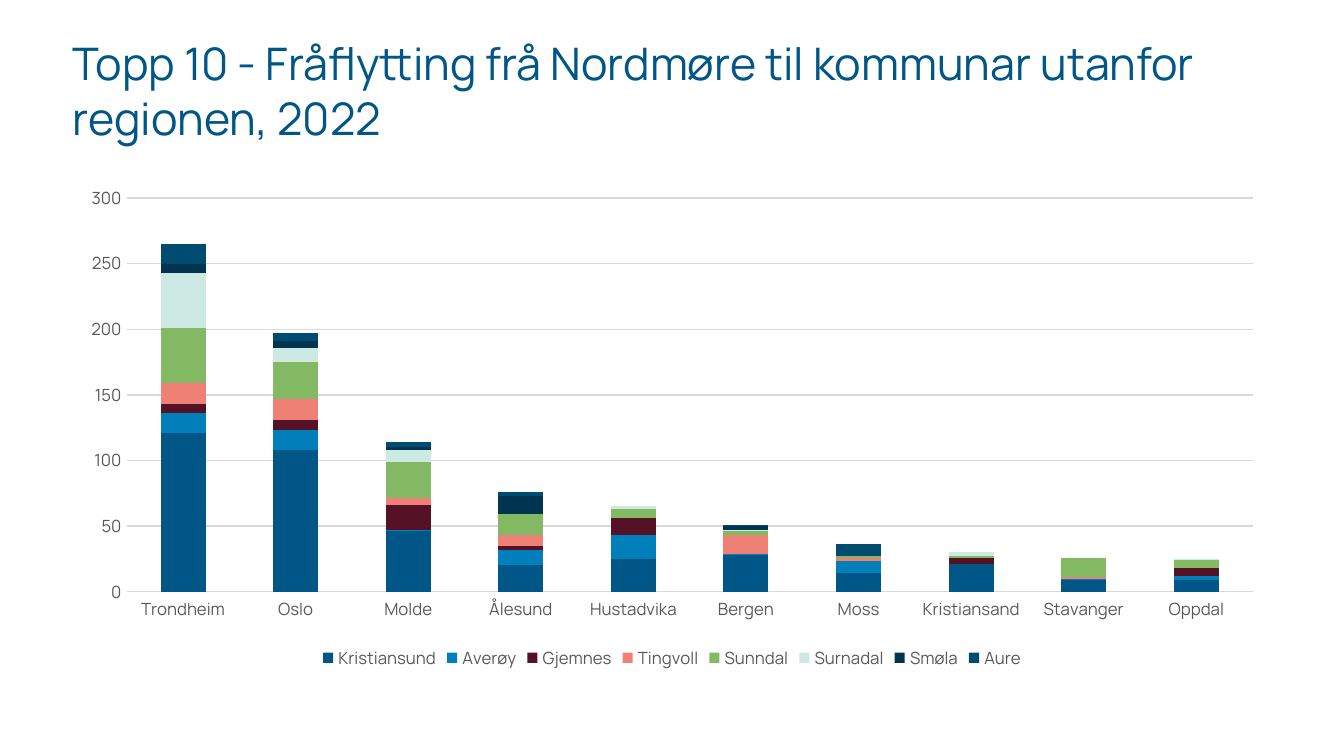
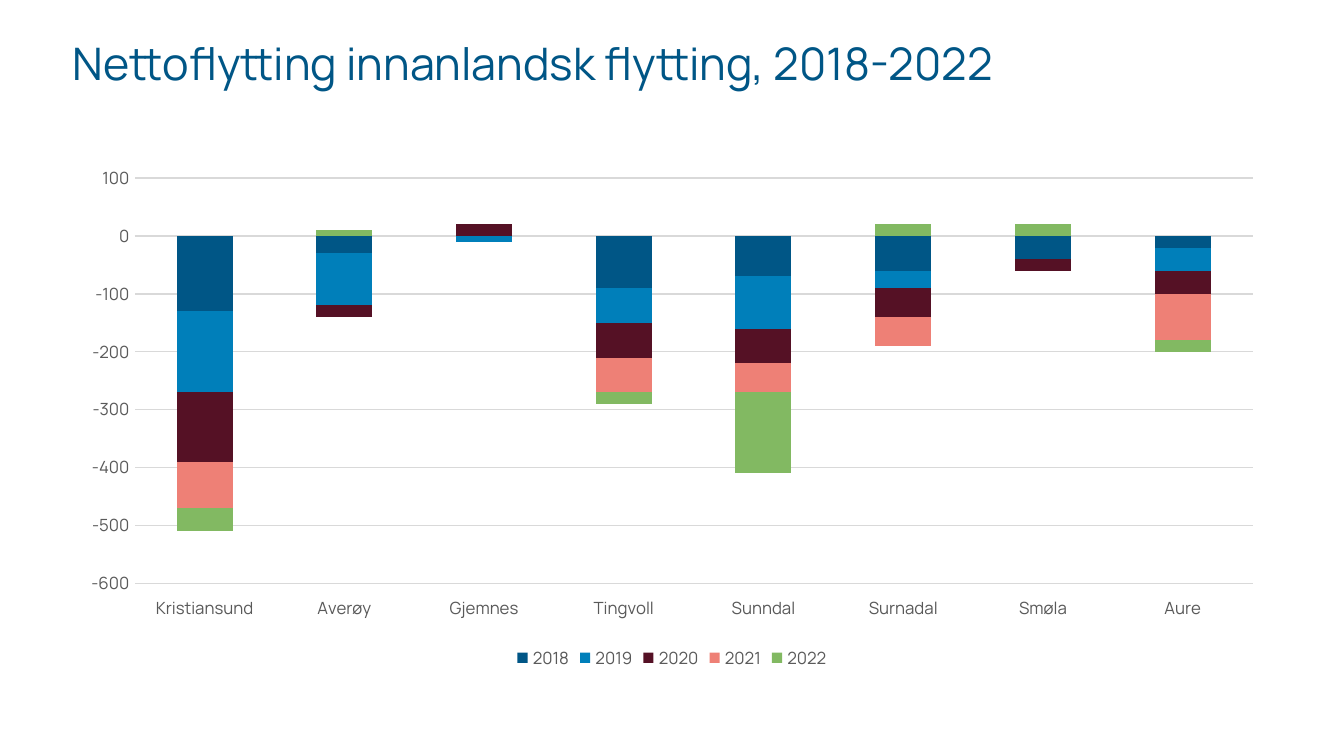
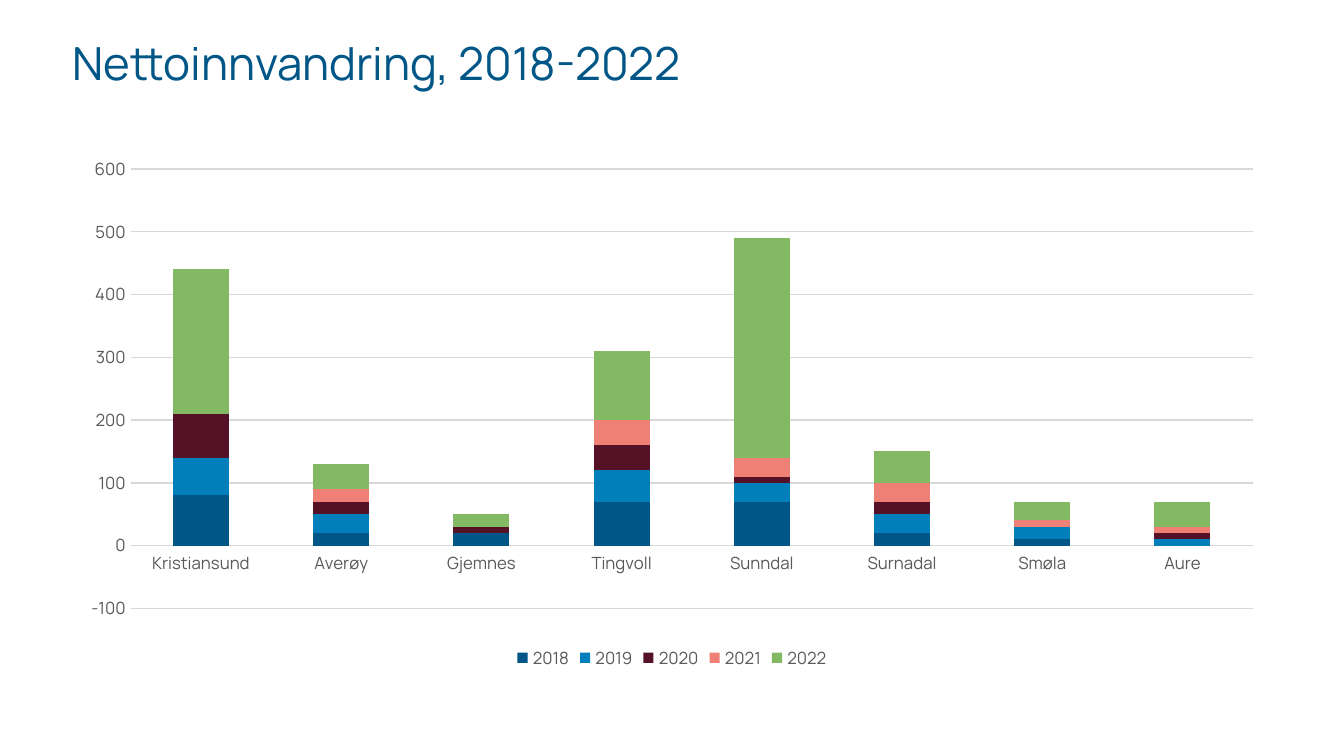
import pptx
import pptx.chart.data
import pptx.dml.color
import pptx.enum.chart
import pptx.enum.text
import pptx.util

FONT = "Manrope"
TITLE_COLOR = "005686"
LABEL_COLOR = "595959"
GRID_COLOR = "D9D9D9"
SERIES_COLORS = ["005686", "007FBA", "551125", "EE8076", "82B962", "CDE9E3", "003450", "004C70"]

SLIDE_WIDTH = pptx.util.Inches(10)
SLIDE_HEIGHT = SLIDE_WIDTH * 9 // 16
MARGIN = 5
CONTENT_WIDTH = 90
TITLE_TOP = 4.1
TITLE_HEIGHT = 16.7
CHART_BOTTOM = 89.3

MUNICIPALITIES = ["Kristiansund", "Averøy", "Gjemnes", "Tingvoll", "Sunndal", "Surnadal", "Smøla", "Aure"]
DESTINATIONS = ["Trondheim", "Oslo", "Molde", "Ålesund", "Hustadvika",
                "Bergen", "Moss", "Kristiansand", "Stavanger", "Oppdal"]
YEARS = ["2018", "2019", "2020", "2021", "2022"]

MOVES_OUT = [
    [121, 108, 46, 20, 25, 28, 14, 21, 9, 9],
    [15, 15, 1, 12, 18, 1, 9, 0, 1, 3],
    [7, 8, 19, 3, 13, 0, 0, 5, 0, 6],
    [16, 16, 5, 8, 0, 14, 3, 0, 1, 0],
    [42, 28, 28, 16, 7, 3, 1, 1, 15, 6],
    [42, 11, 9, 0, 2, 1, 0, 3, 0, 1],
    [7, 5, 2, 14, 0, 3, 0, 0, 0, 0],
    [15, 6, 4, 3, 0, 1, 9, 0, 0, 0],
]
NET_DOMESTIC = [
    [-130, -30, 0, -90, -70, -60, -40, -20],
    [-140, -90, -10, -60, -90, -30, 0, -40],
    [-120, -20, 20, -60, -60, -50, -20, -40],
    [-80, 0, 0, -60, -50, -50, 0, -80],
    [-40, 10, 0, -20, -140, 20, 20, -20],
]
NET_IMMIGRATION = [
    [80, 20, 20, 70, 70, 20, 10, 0],
    [60, 30, 0, 50, 30, 30, 20, 10],
    [70, 20, 10, 40, 10, 20, 0, 10],
    [0, 20, 0, 40, 30, 30, 10, 10],
    [230, 40, 20, 110, 350, 50, 30, 40],
]


def rgb(value):
    """Turn a hex string into a colour."""
    return pptx.dml.color.RGBColor.from_string(value)


def place(left, top, width, height):
    """Turn percentages of the slide into lengths."""
    return [int(share * size / 100) for share, size in
            zip((left, top, width, height), (SLIDE_WIDTH, SLIDE_HEIGHT) * 2)]


def set_font(font, size, color):
    """Apply the shared typeface with a size and colour."""
    font.name = FONT
    font.size = pptx.util.Pt(size)
    font.bold = False
    font.color.rgb = rgb(color)


def set_line(line, color):
    """Draw a thin solid line."""
    line.color.rgb = rgb(color)
    line.width = pptx.util.Pt(0.75)


def add_title(slide, text, size):
    """Add the slide's title."""
    shape = slide.shapes.add_textbox(*place(MARGIN, TITLE_TOP, CONTENT_WIDTH, TITLE_HEIGHT))
    frame = shape.text_frame
    frame.word_wrap = True
    frame.vertical_anchor = pptx.enum.text.MSO_ANCHOR.TOP
    frame.margin_left = frame.margin_right = pptx.util.Inches(0.04)
    frame.margin_top = frame.margin_bottom = pptx.util.Inches(0.02)
    paragraph = frame.paragraphs[0]
    paragraph.text = text
    paragraph.line_spacing = 1.03
    set_font(paragraph.font, size, TITLE_COLOR)


def style_axes(chart, scale, labels_low):
    """Format both axes and the gridlines."""
    value_axis, category_axis = chart.value_axis, chart.category_axis
    for axis in (value_axis, category_axis):
        axis.major_tick_mark = axis.minor_tick_mark = pptx.enum.chart.XL_TICK_MARK.NONE
        set_font(axis.tick_labels.font, 9, LABEL_COLOR)
    set_line(category_axis.format.line, GRID_COLOR)
    if labels_low:
        category_axis.tick_label_position = pptx.enum.chart.XL_TICK_LABEL_POSITION.LOW
    value_axis.minimum_scale, value_axis.maximum_scale, value_axis.major_unit = scale
    value_axis.format.line.fill.background()
    set_line(value_axis.major_gridlines.format.line, GRID_COLOR)
    value_axis.tick_labels.number_format = "0"
    value_axis.tick_labels.number_format_is_linked = False


def add_stacked_chart(slide, top, categories, names, rows, scale, labels_low=False):
    """Add a stacked column chart with its legend below."""
    data = pptx.chart.data.CategoryChartData(number_format="0")
    data.categories = categories
    for name, values in zip(names, rows):
        data.add_series(name, values)
    chart = slide.shapes.add_chart(
        pptx.enum.chart.XL_CHART_TYPE.COLUMN_STACKED,
        *place(MARGIN, top, CONTENT_WIDTH, CHART_BOTTOM - top), data).chart
    chart.has_title = False
    set_font(chart.font, 10, "000000")
    style_axes(chart, scale, labels_low)
    chart.has_legend = True
    chart.legend.position = pptx.enum.chart.XL_LEGEND_POSITION.BOTTOM
    chart.legend.include_in_layout = False
    set_font(chart.legend.font, 9, LABEL_COLOR)
    plot = chart.plots[0]
    plot.gap_width, plot.overlap, plot.vary_by_categories = 150, 100, False
    for series, color in zip(plot.series, SERIES_COLORS):
        series.format.fill.solid()
        series.format.fill.fore_color.rgb = rgb(color)
        series.invert_if_negative = False


def add_slide(presentation, title, size=24):
    """Add a blank slide with a title."""
    slide = presentation.slides.add_slide(presentation.slide_layouts[6])
    add_title(slide, title, size)
    return slide


def main():
    """Build and save the presentation."""
    presentation = pptx.Presentation()
    presentation.slide_width, presentation.slide_height = SLIDE_WIDTH, SLIDE_HEIGHT

    slide = add_slide(presentation, "Topp 10 - Fråflytting frå Nordmøre til kommunar utanfor regionen, 2022")
    add_stacked_chart(slide, 23.3, DESTINATIONS, MUNICIPALITIES, MOVES_OUT, (0, 300, 50))

    slide = add_slide(presentation, "Nettoflytting innanlandsk flytting, 2018-2022")
    add_stacked_chart(slide, 20.6, MUNICIPALITIES, YEARS, NET_DOMESTIC, (-600, 100, 100), labels_low=True)

    slide = add_slide(presentation, "Nettoinnvandring, 2018-2022", size=24.4)
    add_stacked_chart(slide, 19.4, MUNICIPALITIES, YEARS, NET_IMMIGRATION, (-100, 600, 100))

    presentation.save("out.pptx")


if __name__ == "__main__":
    main()
